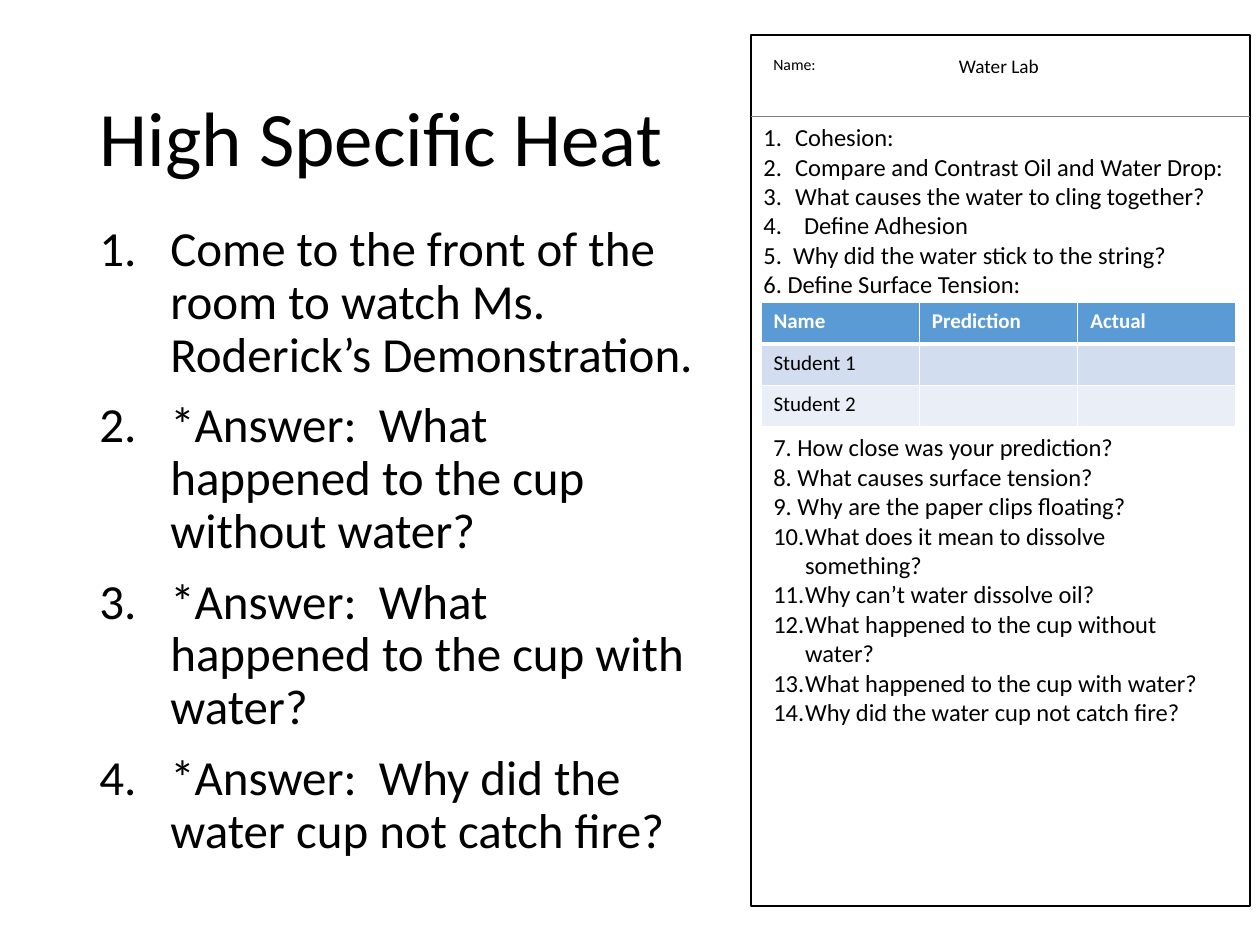
import lxml.etree as etree
import pptx
import pptx.dml.color
import pptx.enum.shapes
import pptx.enum.text
import pptx.oxml.ns
import pptx.util

Cm = pptx.util.Cm
Pt = pptx.util.Pt
qn = pptx.oxml.ns.qn

PANEL_X, PANEL_W = 15.14, 10.06
INNER_X = 15.34
RULE_Y = 2.34
BLACK, WHITE = "000000", "FFFFFF"

STEPS = [
    "Come to the front of the room to watch Ms. Roderick’s Demonstration.",
    "*Answer:  What happened to the cup without water?",
    "*Answer:  What happened to the cup with water?",
    "*Answer:  Why did the water cup not catch fire?",
]
FIRST_NUMBERED = [
    "Cohesion:",
    "Compare and Contrast Oil and Water Drop:",
    "What causes the water to cling together?",
]
FIRST_TYPED = ["5.  Why did the water stick to the string?\n6. Define Surface Tension:"]
LAST_TYPED = [
    "7. How close was your prediction?",
    "8. What causes surface tension?",
    "9. Why are the paper clips floating?",
]
LAST_NUMBERED = [
    "What does it mean to dissolve something?",
    "Why can’t water dissolve oil?",
    "What happened to the cup without water?",
    "What happened to the cup with water?",
    "Why did the water cup not catch fire?",
]
PREDICTIONS = [
    ["Name", "Prediction", "Actual"],
    ["Student 1", "", ""],
    ["Student 2", "", ""],
]
ROW_FILLS = ["5B9BD5", "D2DEEF", "EAEFF7"]


def rgb(value):
    return pptx.dml.color.RGBColor.from_string(value)


def apply(obj, values):
    for name, value in values.items():
        setattr(obj, name, value)


def place(s, left, top, width, height):
    apply(s, {"left": Cm(left), "top": Cm(top), "width": Cm(width), "height": Cm(height)})


def write(p, text, size, color=BLACK, bold=False, **layout):
    apply(p, {"alignment": pptx.enum.text.PP_ALIGN.LEFT, **layout})
    for i, line in enumerate(text.split("\n")):
        if i:
            p.add_line_break()
        r = p.add_run()
        r.text = line
        apply(r.font, {"name": "Calibri", "size": Pt(size), "bold": bold})
        r.font.color.rgb = rgb(color)


def hang(p, indent):
    pPr = p._p.get_or_add_pPr()
    pPr.set("marL", str(Cm(indent)))
    pPr.set("indent", str(-Cm(indent)))
    return pPr


def number(p, indent, start=1):
    pPr = hang(p, indent)
    etree.SubElement(pPr, qn("a:buFont"), typeface="Calibri")
    bullet = etree.SubElement(pPr, qn("a:buAutoNum"), type="arabicPeriod")
    if start > 1:
        bullet.set("startAt", str(start))


def next_paragraph(tf):
    p = tf.paragraphs[0]
    return tf.add_paragraph() if p.runs else p


def add_lines(tf, lines, size, indent=None, start=1, **layout):
    for line in lines:
        p = next_paragraph(tf)
        write(p, line, size, **layout)
        if indent:
            number(p, indent, start)


def add_box(s, left, top, width, height):
    tf = s.shapes.add_textbox(Cm(left), Cm(top), Cm(width), Cm(height)).text_frame
    apply(tf, {"word_wrap": True,
               "auto_size": pptx.enum.text.MSO_AUTO_SIZE.SHAPE_TO_FIT_TEXT})
    return tf


def fill_placeholders(s):
    title, body = s.placeholders[0], s.placeholders[1]
    place(title, 1.75, 1.02, 21.89, 3.68)
    place(body, 1.75, 4.39, 12.55, 13.87)
    for sp in (title, body):
        sp.text_frame.auto_size = pptx.enum.text.MSO_AUTO_SIZE.NONE
    title.text_frame.vertical_anchor = pptx.enum.text.MSO_ANCHOR.MIDDLE
    add_lines(title.text_frame, ["High Specific Heat"], 44, line_spacing=0.9)
    add_lines(body.text_frame, STEPS, 28, indent=1.43,
              line_spacing=0.9, space_before=Pt(10))


def add_panel(s):
    sp = s.shapes.add_shape(pptx.enum.shapes.MSO_SHAPE.RECTANGLE,
                            Cm(PANEL_X), Cm(0.71), Cm(PANEL_W), Cm(17.55))
    sp.shadow.inherit = False
    sp.fill.solid()
    sp.fill.fore_color.rgb = rgb(WHITE)
    sp.line.color.rgb = rgb(BLACK)
    sp.line.width = Pt(1)


def add_rule(s):
    line = s.shapes.add_connector(pptx.enum.shapes.MSO_CONNECTOR.STRAIGHT, Cm(PANEL_X),
                                  Cm(RULE_Y), Cm(PANEL_X + PANEL_W), Cm(RULE_Y))
    line.line.color.rgb = rgb("808080")
    line.line.width = Pt(0.5)
    etree.SubElement(line._element.spPr, qn("a:effectLst"))


def set_borders(cell, widths):
    tcPr = cell._tc.get_or_add_tcPr()
    for side, width in widths.items():
        ln = etree.SubElement(tcPr, qn(f"a:ln{side}"), w=str(Pt(width)))
        fill = etree.SubElement(ln, qn("a:solidFill"))
        etree.SubElement(fill, qn("a:srgbClr"), val=WHITE)


def add_predictions(s):
    table = s.shapes.add_table(3, 3, Cm(INNER_X), Cm(6.1), Cm(9.58), Cm(2.51)).table
    for i, (row, fill) in enumerate(zip(PREDICTIONS, ROW_FILLS)):
        header = i == 0
        for j, text in enumerate(row):
            cell = table.cell(i, j)
            set_borders(cell, {"L": 1, "R": 1, "T": 3 if i == 1 else 1,
                               "B": 3 if header else 1})
            cell.fill.solid()
            cell.fill.fore_color.rgb = rgb(fill)
            p = cell.text_frame.paragraphs[0]
            if text:
                write(p, text, 12, WHITE if header else BLACK, header)
            else:
                etree.SubElement(p._p, qn("a:endParaRPr"), sz="1200")


def add_questions(s):
    tf = add_box(s, INNER_X, 8.59, 9.37, 7.65)
    add_lines(tf, LAST_TYPED, 14)
    add_lines(tf, LAST_NUMBERED, 14, indent=0.64, start=10)

    tf = add_box(s, PANEL_X, RULE_Y, PANEL_W, 4.78)
    add_lines(tf, FIRST_NUMBERED, 14, indent=0.64)
    p = next_paragraph(tf)
    write(p, "4.\tDefine Adhesion", 14)
    hang(p, 0.82)
    add_lines(tf, FIRST_TYPED, 14)


def main():
    prs = pptx.Presentation()
    apply(prs, {"slide_width": Cm(25.4), "slide_height": Cm(19.05)})
    s = prs.slides.add_slide(prs.slide_layouts[1])
    fill_placeholders(s)
    add_panel(s)
    add_lines(add_box(s, INNER_X, 0.97, 2.18, 0.64), ["Name:"], 9)
    add_lines(add_box(s, 19.08, 0.97, 2.18, 0.74), ["Water Lab"], 11)
    add_rule(s)
    add_predictions(s)
    add_questions(s)
    prs.save("out.pptx")


if __name__ == "__main__":
    main()
